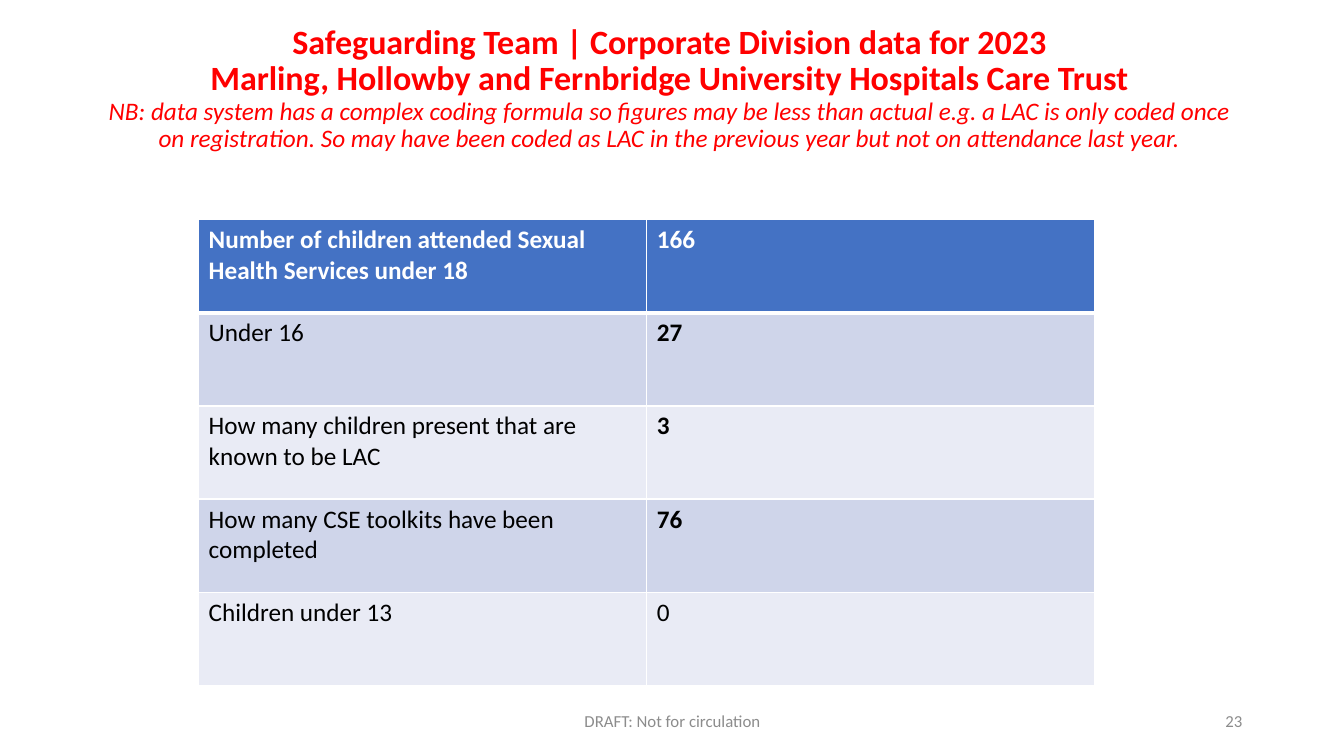
from lxml import etree
from pptx import Presentation
from pptx import util as u
from pptx.dml.color import RGBColor
from pptx.enum import text
from pptx.oxml.ns import qn

FONT = "Calibri"
RED, GREY, WHITE, BLACK = "FF0000", "8C8C8C", "FFFFFF", "000000"
HEADER_FILL, BAND_FILLS = "4472C4", ("CFD5EA", "E9EBF5")

HEADING = [
    "Safeguarding Team | Corporate Division data for 2023",
    "Marling, Hollowby and Fernbridge University Hospitals Care Trust",
]
CAVEAT = (
    "NB: data system has a complex coding formula so figures may be less than "
    "actual e.g. a LAC is only coded once on registration. So may have been "
    "coded as LAC in the previous year but not on attendance last year."
)
# Label, value, and whether the value is bold
FIGURES = [
    ("Number of children attended Sexual Health Services under 18", "166", True),
    ("Under 16", "27", True),
    ("How many children present that are known to be LAC", "3", True),
    ("How many CSE toolkits have been completed", "76", True),
    ("Children under 13", "0", False),
]


def colour(value):
    return RGBColor.from_string(value)


def style(para, size, shade, bold=False, italic=False):
    font = para.font
    font.name, font.size = FONT, u.Pt(size)
    font.bold, font.italic = bold, italic
    font.color.rgb = colour(shade)


def add_text_frame(page, left, top, width, height):
    box = page.shapes.add_textbox(*map(u.Inches, (left, top, width, height)))
    frame = box.text_frame
    frame.word_wrap = True
    frame.vertical_anchor = text.MSO_ANCHOR.MIDDLE
    return frame


def add_title(page, left, top, width, height):
    frame = add_text_frame(page, left, top, width, height)
    # A deeper bottom inset lifts the centred lines
    frame.margin_top, frame.margin_bottom = 0, u.Inches(0.3)
    frame.text = "\n".join(HEADING + [CAVEAT])
    for para in frame.paragraphs:
        para.alignment = text.PP_ALIGN.CENTER
        para.line_spacing = 0.9
        style(para, 24.3, RED, bold=True)
    style(frame.paragraphs[-1], 18, RED, italic=True)


def add_footer(page, left, top, width, height, words, alignment):
    frame = add_text_frame(page, left, top, width, height)
    frame.text = words
    para = frame.paragraphs[0]
    para.alignment = alignment
    style(para, 12, GREY)


def set_borders(cell, widths):
    properties = cell._tc.get_or_add_tcPr()
    for position, (side, points) in enumerate(widths.items()):
        line = etree.Element(qn(f"a:ln{side}"), w=str(u.Pt(points)))
        fill = etree.SubElement(line, qn("a:solidFill"))
        etree.SubElement(fill, qn("a:srgbClr"), val=WHITE)
        properties.insert(position, line)


def add_figures(page, left, top, width, height):
    frame = page.shapes.add_table(
        len(FIGURES), 2, *map(u.Inches, (left, top, width, height)))
    table = frame.table
    for row, (label, value, bold_value) in enumerate(FIGURES):
        header = row == 0
        fill = HEADER_FILL if header else BAND_FILLS[(row - 1) % 2]
        for column, (words, bold) in enumerate(
                [(label, header), (value, bold_value)]):
            cell = table.cell(row, column)
            cell.text = words
            style(cell.text_frame.paragraphs[0], 18,
                  WHITE if header else BLACK, bold)
            cell.fill.solid()
            cell.fill.fore_color.rgb = colour(fill)
            # The rule under the header is heavier
            set_borders(cell, {"L": 1, "R": 1, "T": 3 if row == 1 else 1,
                               "B": 3 if header else 1})


def main():
    deck = Presentation()
    deck.slide_width, deck.slide_height = u.Inches(13.33), u.Inches(7.5)
    page = deck.slides.add_slide(deck.slide_layouts[6])

    # Heading and figures
    add_title(page, 0.89, 0.29, 11.5, 1.48)
    add_figures(page, 1.97, 2.18, 8.89, 4.62)

    # Footer and page number
    add_footer(page, 4.42, 6.95, 4.5, 0.4,
               "DRAFT: Not for circulation", text.PP_ALIGN.CENTER)
    add_footer(page, 9.42, 6.95, 3, 0.4, "23", text.PP_ALIGN.RIGHT)

    deck.save("out.pptx")


if __name__ == "__main__":
    main()
